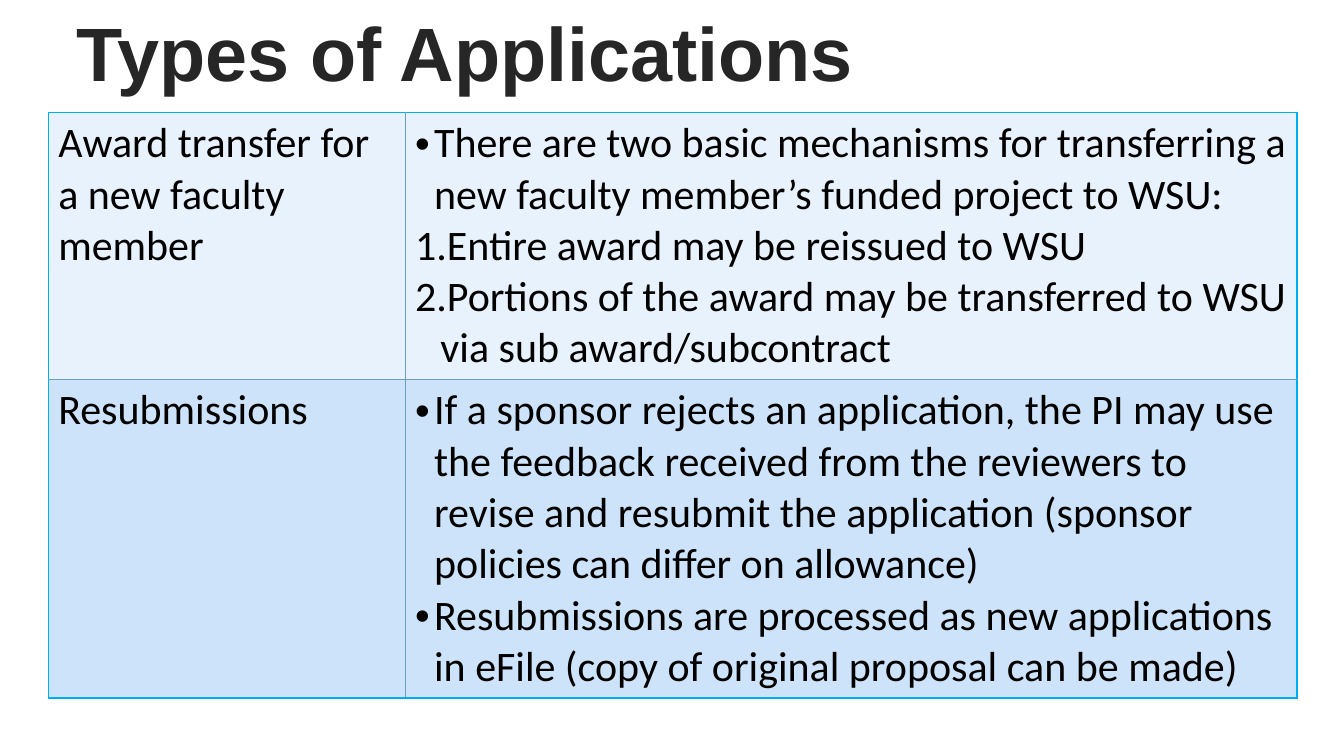
from dataclasses import dataclass

from lxml.etree import SubElement
from pptx import Presentation
from pptx.dml.color import RGBColor
from pptx.enum.text import MSO_ANCHOR, MSO_AUTO_SIZE, PP_ALIGN
from pptx.oxml.ns import qn
from pptx.util import Cm, Pt

COLORS = {
    "title": "262626",
    "text": "000000",
    "outline": "00AEEF",
    "divider": "6C9DBB",
    "light row": "E7F2FC",
    "dark row": "CCE3F9",
}


@dataclass(frozen=True)
class Marker:
    tag: str
    attribute: str
    value: str
    indent: Cm


BULLET = Marker("a:buChar", "char", "•", Cm(0.48))
NUMBER = Marker("a:buAutoNum", "type", "arabicPeriod", Cm(0.64))


@dataclass(frozen=True)
class Item:
    text: str
    marker: Marker | None = None


@dataclass(frozen=True)
class ApplicationType:
    name: str
    details: list[Item]
    fill: str
    height: Cm


APPLICATION_TYPES = [
    ApplicationType(
        "Award transfer for a new faculty member",
        [
            Item("There are two basic mechanisms for transferring a new faculty "
                 "member’s funded project to WSU:", BULLET),
            Item("Entire award may be reissued to WSU", NUMBER),
            Item("Portions of the award may be transferred to WSU via sub "
                 "award/subcontract", NUMBER),
        ],
        "light row",
        Cm(6.73),
    ),
    ApplicationType(
        "Resubmissions",
        [
            Item("If a sponsor rejects an application, the PI may use the feedback "
                 "received from the reviewers to revise and resubmit the application "
                 "(sponsor policies can differ on allowance)", BULLET),
            Item("Resubmissions are processed as new applications in eFile (copy of "
                 "original proposal can be made)", BULLET),
        ],
        "dark row",
        Cm(8),
    ),
]
COLUMN_WIDTHS = [Cm(8.99), Cm(22.48)]


def color(name: str) -> RGBColor:
    return RGBColor.from_string(COLORS[name])


def add_marker(paragraph, marker: Marker) -> None:
    properties = paragraph._p.get_or_add_pPr()
    properties.set("marL", str(int(marker.indent)))
    properties.set("indent", str(-int(marker.indent)))
    if marker is BULLET:
        SubElement(properties, qn("a:buFont"), typeface="Arial")
    SubElement(properties, qn(marker.tag), {marker.attribute: marker.value})


def set_borders(cell, outer_sides: set[str]) -> None:
    properties = cell._tc.get_or_add_tcPr()
    for position, side in enumerate(("L", "R", "T", "B")):
        outer = side in outer_sides
        width = Pt(1.25) if outer else Pt(0.5)
        line = properties.makeelement(qn(f"a:ln{side}"), {"w": str(int(width))})
        solid = SubElement(line, qn("a:solidFill"))
        name = "outline" if outer else "divider"
        SubElement(solid, qn("a:srgbClr"), val=COLORS[name])
        properties.insert(position, line)


def fill_cell(cell, items: list[Item], fill: str) -> None:
    cell.fill.solid()
    cell.fill.fore_color.rgb = color(fill)
    cell.margin_left = cell.margin_right = Cm(0.25)
    cell.margin_top = cell.margin_bottom = Cm(0.13)
    cell.vertical_anchor = MSO_ANCHOR.TOP
    frame = cell.text_frame
    for index, item in enumerate(items):
        paragraph = frame.add_paragraph() if index else frame.paragraphs[0]
        paragraph.text = item.text
        paragraph.font.name = "Calibri"
        paragraph.font.size = Pt(30)
        paragraph.font.bold = False
        paragraph.font.color.rgb = color("text")
        if item.marker:
            add_marker(paragraph, item.marker)


def add_title(slide, text: str) -> None:
    title = slide.shapes.title
    title.left, title.top, title.width, title.height = Cm(1.68), Cm(0), Cm(24.74), Cm(2.57)
    frame = title.text_frame
    frame.text = text
    frame.word_wrap = True
    frame.auto_size = MSO_AUTO_SIZE.NONE
    frame.vertical_anchor = MSO_ANCHOR.BOTTOM
    paragraph = frame.paragraphs[0]
    paragraph.alignment = PP_ALIGN.LEFT
    paragraph.font.name = "Arial"
    paragraph.font.size = Pt(54)
    paragraph.font.bold = True
    paragraph.font.color.rgb = color("title")


def add_types_table(slide, types: list[ApplicationType]) -> None:
    height = sum(entry.height for entry in types)
    table = slide.shapes.add_table(
        len(types), len(COLUMN_WIDTHS), Cm(1.22), Cm(2.84), sum(COLUMN_WIDTHS), height
    ).table
    table.first_row = False
    table.horz_banding = False
    for column, width in zip(table.columns, COLUMN_WIDTHS):
        column.width = width
    for index, (row, entry) in enumerate(zip(table.rows, types)):
        row.height = entry.height
        vertical_sides = {"T"} if index == 0 else set()
        if index == len(types) - 1:
            vertical_sides.add("B")
        contents = ([Item(entry.name)], entry.details)
        for cell, items, side in zip(row.cells, contents, "LR"):
            fill_cell(cell, items, entry.fill)
            set_borders(cell, vertical_sides | {side})


def main() -> None:
    presentation = Presentation()
    presentation.slide_width = Cm(33.87)
    presentation.slide_height = Cm(19.05)
    # Title Only layout
    slide = presentation.slides.add_slide(presentation.slide_layouts[5])
    # Heading
    add_title(slide, "Types of Applications")
    # Table of application types
    add_types_table(slide, APPLICATION_TYPES)
    presentation.save("out.pptx")


if __name__ == "__main__":
    main()
